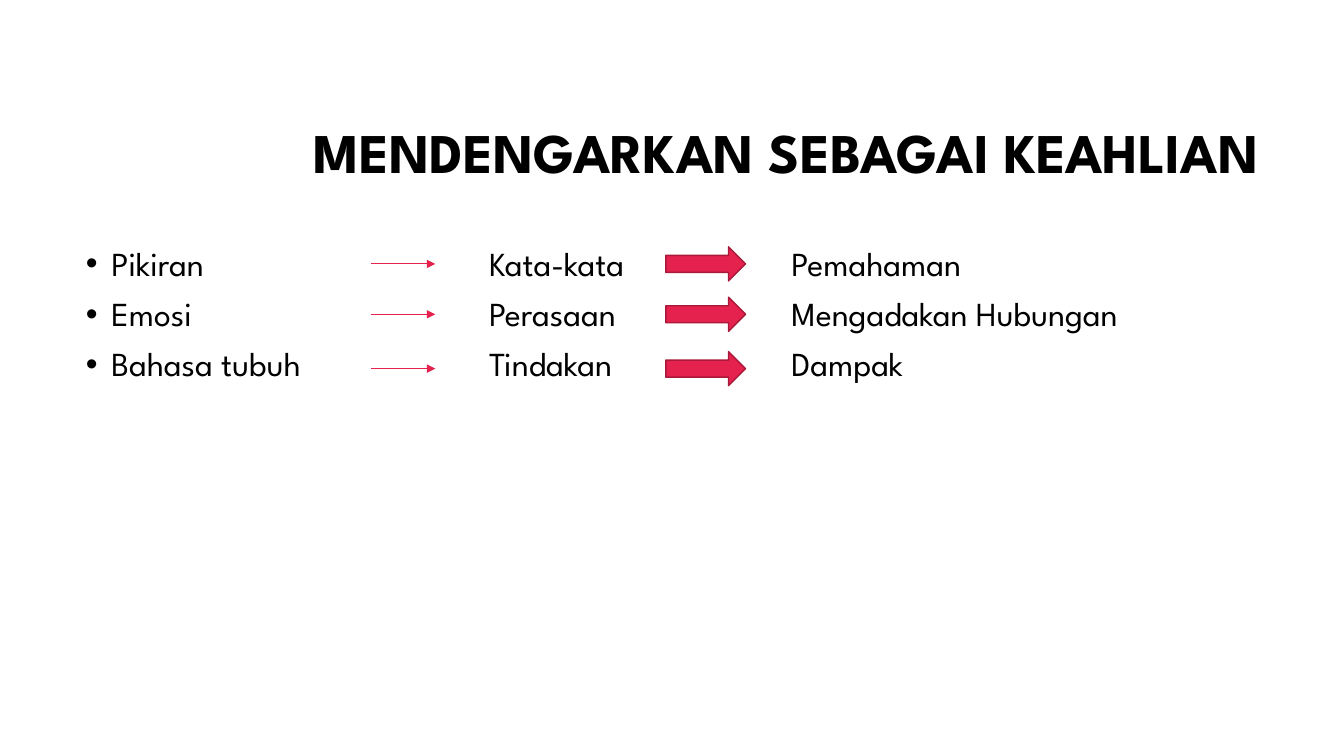
from lxml import etree
from pptx import Presentation
from pptx.dml.color import RGBColor
from pptx.enum.shapes import MSO_CONNECTOR, MSO_SHAPE
from pptx.enum.text import MSO_ANCHOR, MSO_AUTO_SIZE, PP_ALIGN
from pptx.oxml.ns import qn
from pptx.util import Cm, Pt

TITLE = "MENDENGARKAN SEBAGAI KEAHLIAN"
ROWS = [
    ("Pikiran", "Kata-kata", "Pemahaman"),
    ("Emosi", "Perasaan", "Mengadakan Hubungan"),
    ("Bahasa tubuh", "Tindakan", "Dampak"),
]
ROW_CENTERS = [6.65, 7.92, 9.29]

FONT = "League Spartan"
BLACK = RGBColor(0x00, 0x00, 0x00)
WHITE = RGBColor(0xFF, 0xFF, 0xFF)
RED = RGBColor(0xE5, 0x22, 0x4E)
DARK_RED = RGBColor(0xA9, 0x19, 0x3A)
STRAIGHT = MSO_CONNECTOR.STRAIGHT
RIGHT_ARROW = MSO_SHAPE.RIGHT_ARROW
MIDDLE, TOP = MSO_ANCHOR.MIDDLE, MSO_ANCHOR.TOP
NO_AUTO_SIZE = MSO_AUTO_SIZE.NONE
RIGHT = PP_ALIGN.RIGHT

THIN_LEFT, THIN_RIGHT = 9.35, 10.97
BLOCK_LEFT, BLOCK_WIDTH, BLOCK_HEIGHT = 16.78, 2.01, 0.86
BULLET_INDENT = Cm(0.64)
COLUMN_TABS = [Cm(10.16), Cm(17.78)]


def place(shape, left, top, width, height, anchor):
    shape.left, shape.top = Cm(left), Cm(top)
    shape.width, shape.height = Cm(width), Cm(height)
    frame = shape.text_frame
    frame.word_wrap = True
    frame.auto_size = NO_AUTO_SIZE
    frame.vertical_anchor = anchor
    return frame


def style(paragraph, size, bold=False):
    paragraph.line_spacing = 0.9
    for run in paragraph.runs:
        run.font.name = FONT
        run.font.size = Pt(size)
        run.font.bold = bold
        run.font.color.rgb = BLACK


def add_bullet_and_tabs(paragraph):
    properties = paragraph._p.get_or_add_pPr()
    properties.set("marL", str(BULLET_INDENT))
    properties.set("indent", str(-BULLET_INDENT))
    etree.SubElement(properties, qn("a:buFont")).set("typeface", "Arial")
    etree.SubElement(properties, qn("a:buChar")).set("char", "•")
    tabs = etree.SubElement(properties, qn("a:tabLst"))
    for position in COLUMN_TABS:
        etree.SubElement(tabs, qn("a:tab"), pos=str(position), algn="l")


def add_thin_arrow(slide, center):
    arrow = slide.shapes.add_connector(
        STRAIGHT, Cm(THIN_LEFT), Cm(center), Cm(THIN_RIGHT), Cm(center))
    arrow.line.color.rgb = RED
    arrow.line.width = Pt(0.75)
    etree.SubElement(arrow.line._get_or_add_ln(), qn("a:tailEnd")).set("type", "triangle")
    etree.SubElement(arrow._element.spPr, qn("a:effectLst"))


def add_block_arrow(slide, center):
    arrow = slide.shapes.add_shape(
        RIGHT_ARROW, Cm(BLOCK_LEFT), Cm(center - BLOCK_HEIGHT / 2),
        Cm(BLOCK_WIDTH), Cm(BLOCK_HEIGHT))
    arrow.shadow.inherit = False
    arrow.fill.solid()
    arrow.fill.fore_color.rgb = RED
    arrow.line.color.rgb = DARK_RED
    arrow.line.width = Pt(1)


def main():
    presentation = Presentation()
    presentation.slide_width, presentation.slide_height = Cm(33.87), Cm(19.05)
    slide = presentation.slides.add_slide(presentation.slide_layouts[1])
    slide.background.fill.solid()
    slide.background.fill.fore_color.rgb = WHITE

    title_frame = place(slide.shapes.title, 5.59, 2.13, 26.39, 3.58, MIDDLE)
    title_frame.text = TITLE
    title_frame.paragraphs[0].alignment = RIGHT
    style(title_frame.paragraphs[0], 40, bold=True)

    body_frame = place(slide.placeholders[1], 1.91, 6.1, 30.05, 11.18, TOP)
    body_frame.text = "\n".join("\t".join(row) for row in ROWS)
    for index, paragraph in enumerate(body_frame.paragraphs):
        add_bullet_and_tabs(paragraph)
        paragraph.space_before = Pt(10 if index else 0)
        style(paragraph, 24)

    for add_arrow in (add_thin_arrow, add_block_arrow):
        for center in ROW_CENTERS:
            add_arrow(slide, center)

    presentation.save("out.pptx")


if __name__ == "__main__":
    main()
